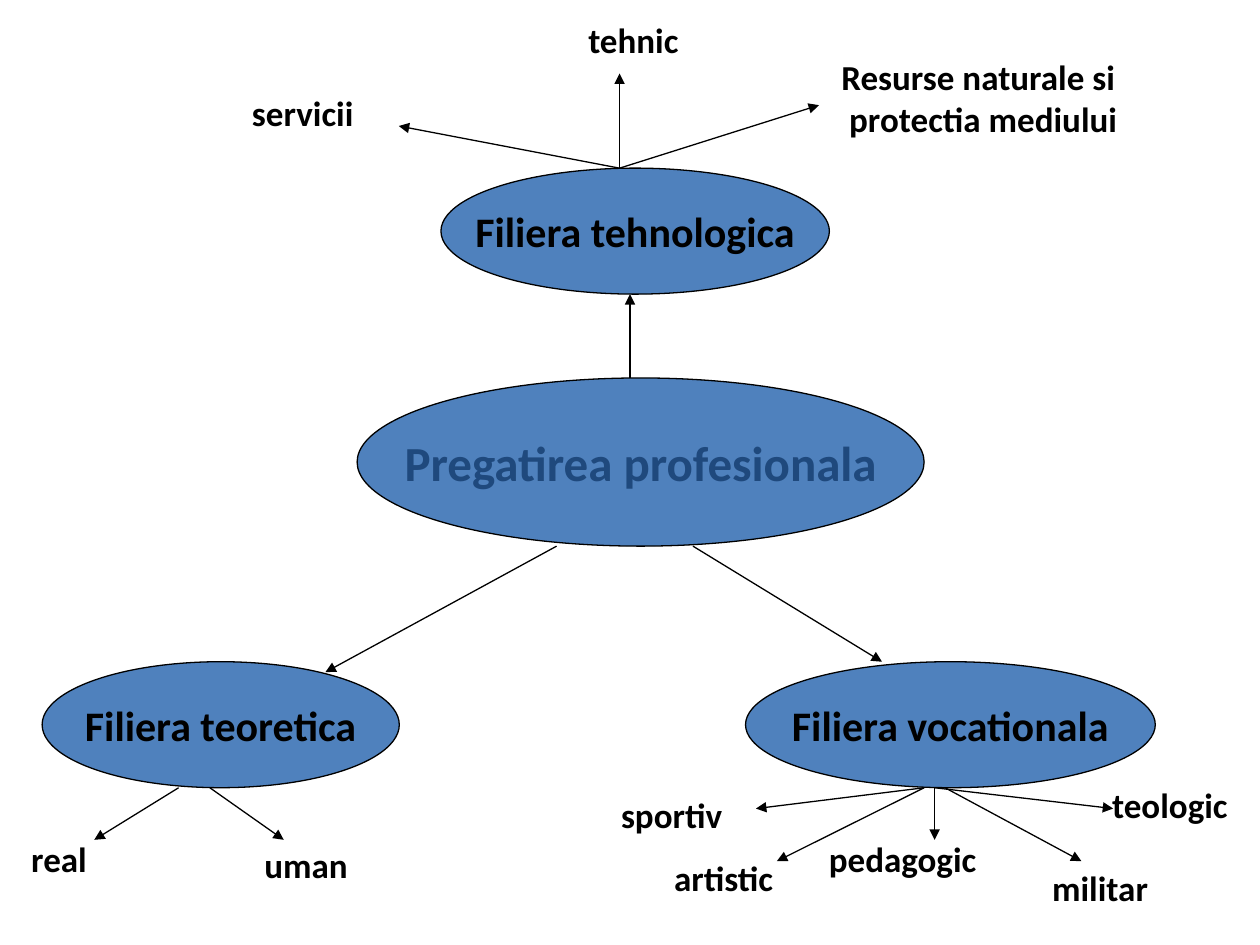
"""Build a slide that maps professional training to its three branches and their profiles."""
from lxml.etree import SubElement
from pptx import Presentation
from pptx.dml.color import RGBColor
from pptx.enum.shapes import MSO_CONNECTOR, MSO_SHAPE
from pptx.enum.text import MSO_ANCHOR, MSO_AUTO_SIZE, PP_ALIGN
from pptx.oxml.ns import qn
from pptx.util import Cm, Pt

BLACK = RGBColor(0x00, 0x00, 0x00)
BLUE = RGBColor(0x4F, 0x81, 0xBD)
NAVY = RGBColor(0x1F, 0x49, 0x7D)
LINE_WIDTH = Pt(0.75)


def write_text(shape, text, size=20, color=BLACK, align=PP_ALIGN.LEFT, anchor=MSO_ANCHOR.TOP):
    frame = shape.text_frame
    frame.word_wrap = False
    frame.vertical_anchor = anchor
    frame.text = text
    for paragraph in frame.paragraphs:
        paragraph.alignment = align
        font = paragraph.runs[0].font
        font.name = "Calibri"
        font.size = Pt(size)
        font.bold = True
        font.color.rgb = color


def add_arrow(slide, start, end):
    arrow = slide.shapes.add_connector(
        MSO_CONNECTOR.STRAIGHT, *(Cm(value) for value in start + end)
    )
    arrow.line.color.rgb = BLACK
    arrow.line.width = LINE_WIDTH
    SubElement(arrow.line._get_or_add_ln(), qn("a:tailEnd"), type="triangle")
    SubElement(arrow._element.spPr, qn("a:effectLst"))


presentation = Presentation()
presentation.slide_width = Cm(25.4)
presentation.slide_height = Cm(19.05)
slide = presentation.slides.add_slide(presentation.slide_layouts[6])

ellipses = [
    ("Pregatirea profesionala", 7.2, 7.62, 11.43, 3.39, 28, NAVY),
    ("Filiera tehnologica", 8.89, 3.39, 7.83, 2.54, 24, BLACK),
    ("Filiera teoretica", 0.85, 13.34, 7.2, 2.54, 24, BLACK),
    ("Filiera vocationala", 15.03, 13.34, 8.26, 2.54, 24, BLACK),
]
for text, left, top, width, height, size, color in ellipses:
    ellipse = slide.shapes.add_shape(
        MSO_SHAPE.OVAL, Cm(left), Cm(top), Cm(width), Cm(height)
    )
    ellipse.shadow.inherit = False
    ellipse.fill.solid()
    ellipse.fill.fore_color.rgb = BLUE
    ellipse.line.color.rgb = BLACK
    ellipse.line.width = LINE_WIDTH
    write_text(ellipse, text, size=size, color=color,
               align=PP_ALIGN.CENTER, anchor=MSO_ANCHOR.MIDDLE)

labels = [
    ("tehnic", 11.61, 0.25, 2.59, 1.09),
    ("servicii", 4.83, 1.73, 2.95, 1.09),
    ("Resurse naturale si\n protectia mediului", 16.71, 0.99, 7.01, 1.96),
    ("real", 0.38, 16.76, 1.75, 1.09),
    ("uman", 5.08, 16.87, 2.39, 1.09),
    ("sportiv", 12.27, 15.88, 2.87, 1.09),
    ("artistic", 13.34, 17.15, 2.82, 1.09),
    ("pedagogic", 16.46, 16.76, 4.04, 1.09),
    ("teologic", 22.17, 15.67, 3.23, 1.09),
    ("militar", 20.96, 17.35, 2.62, 1.09),
]
for text, left, top, width, height in labels:
    label = slide.shapes.add_textbox(Cm(left), Cm(top), Cm(width), Cm(height))
    write_text(label, text)
    label.text_frame.auto_size = MSO_AUTO_SIZE.SHAPE_TO_FIT_TEXT

branch_arrows = [
    ((12.7, 7.62), (12.7, 5.93)),
    ((11.22, 11.01), (6.56, 13.55)),
    ((13.97, 11.01), (17.78, 13.34)),
]
technological_arrows = [
    ((12.49, 3.39), end) for end in [(12.49, 1.48), (16.51, 2.12), (8.04, 2.54)]
]
lower_arrows = [
    ((start_left, 15.88), end)
    for start_left, end in [
        (3.6, (1.9, 16.93)),
        (4.23, (5.72, 16.93)),
        (18.63, (15.24, 16.3)),
        (18.63, (15.66, 17.36)),
        (18.84, (18.84, 16.93)),
        (18.84, (22.44, 16.3)),
        (19.05, (21.8, 17.36)),
    ]
]
for start, end in branch_arrows + technological_arrows + lower_arrows:
    add_arrow(slide, start, end)

presentation.save("out.pptx")
